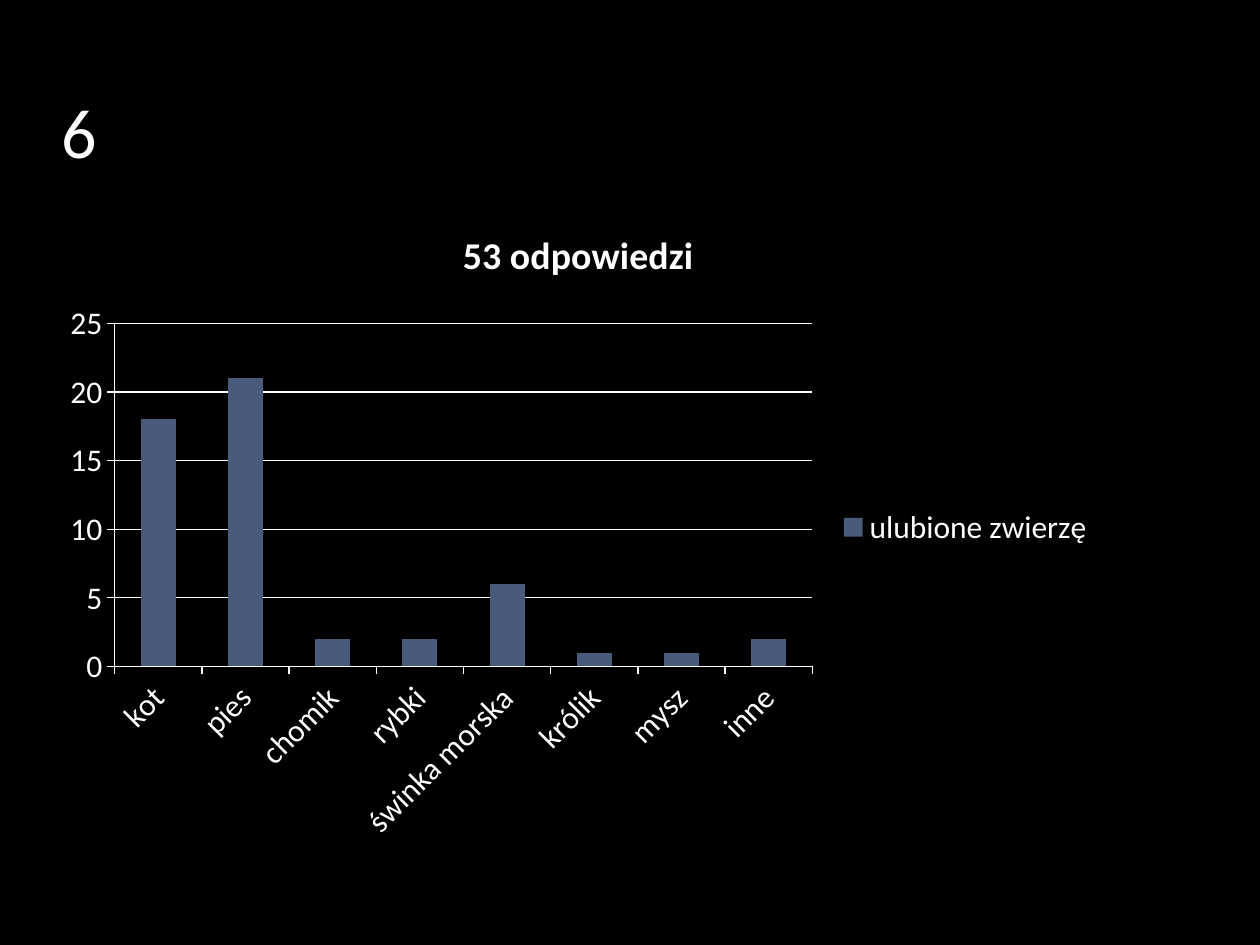
from pptx import Presentation
from pptx.chart.data import CategoryChartData
from pptx.dml.color import RGBColor
from pptx.enum.chart import XL_CHART_TYPE as ChartType
from pptx.enum.chart import XL_LEGEND_POSITION as LegendPosition
from pptx.enum.chart import XL_TICK_MARK as TickMark
from pptx.enum.text import MSO_ANCHOR as Anchor
from pptx.util import Inches, Pt

BLACK = RGBColor(0x00, 0x00, 0x00)
WHITE = RGBColor(0xFF, 0xFF, 0xFF)
SLATE = RGBColor(0x4A, 0x5A, 0x7A)

LEFT, WIDTH = 0.39, 8.4
FAVOURITE_PETS = {
    "kot": 18, "pies": 21, "chomik": 2, "rybki": 2,
    "świnka morska": 6, "królik": 1, "mysz": 1, "inne": 2,
}


def style_font(font, size=18, color=WHITE, name="Calibri", bold=False):
    font.size = Pt(size)
    font.color.rgb = color
    font.name = name
    font.bold = bold


def write_text(frame, text, space_before=0, **style):
    para = frame.paragraphs[0]
    para.space_before = Pt(space_before)
    span = para.add_run()
    span.text = text
    style_font(span.font, **style)


class SlideBuilder:
    """Holds the dark style and the current slide."""

    text_color, bar_color, background = WHITE, SLATE, BLACK

    def __init__(self, deck):
        self.page = deck.slides.add_slide(deck.slide_layouts[6])
        fill = self.page.background.fill
        fill.solid()
        fill.fore_color.rgb = self.background

    def heading(self, text, left, top, width, height):
        box = self.page.shapes.add_textbox(
            Inches(left), Inches(top), Inches(width), Inches(height))
        frame = box.text_frame
        frame.word_wrap = True
        frame.vertical_anchor = Anchor.BOTTOM
        write_text(frame, text, space_before=4, size=40, color=self.text_color)

    def column_chart(self, title, series_name, values, left, top, width, height):
        data = CategoryChartData()
        data.categories = list(values)
        data.add_series(series_name, list(values.values()))
        chart = self.page.shapes.add_chart(
            ChartType.COLUMN_STACKED, Inches(left), Inches(top),
            Inches(width), Inches(height), data).chart
        style_font(chart.font, color=self.text_color)

        # Title and legend
        chart.has_title = True
        write_text(chart.chart_title.text_frame, title, size=21.6,
                   color=self.text_color, bold=True)
        chart.chart_title.include_in_layout = False
        chart.has_legend = True
        chart.legend.position = LegendPosition.RIGHT
        chart.legend.include_in_layout = False

        # Columns
        plot = chart.plots[0]
        plot.vary_by_categories = False
        plot.gap_width = 150
        plot.overlap = 100
        fill = plot.series[0].format.fill
        fill.solid()
        fill.fore_color.rgb = self.bar_color

        # Axes and gridlines
        chart.value_axis.has_major_gridlines = True
        for axis in (chart.category_axis, chart.value_axis):
            axis.major_tick_mark = TickMark.OUTSIDE
            self.line(axis.format.line)
        self.line(chart.value_axis.major_gridlines.format.line)

    def line(self, line):
        line.color.rgb = self.text_color
        line.width = Pt(0.75)


def main():
    deck = Presentation()
    deck.slide_width, deck.slide_height = Inches(10), Inches(7.5)
    slide = SlideBuilder(deck)
    slide.column_chart("53 odpowiedzi", "ulubione zwierzę", FAVOURITE_PETS,
                       LEFT, 1.6, WIDTH, 5.17)
    slide.heading("6", LEFT, 0.25, WIDTH, 1.17)
    deck.save("out.pptx")


if __name__ == "__main__":
    main()
